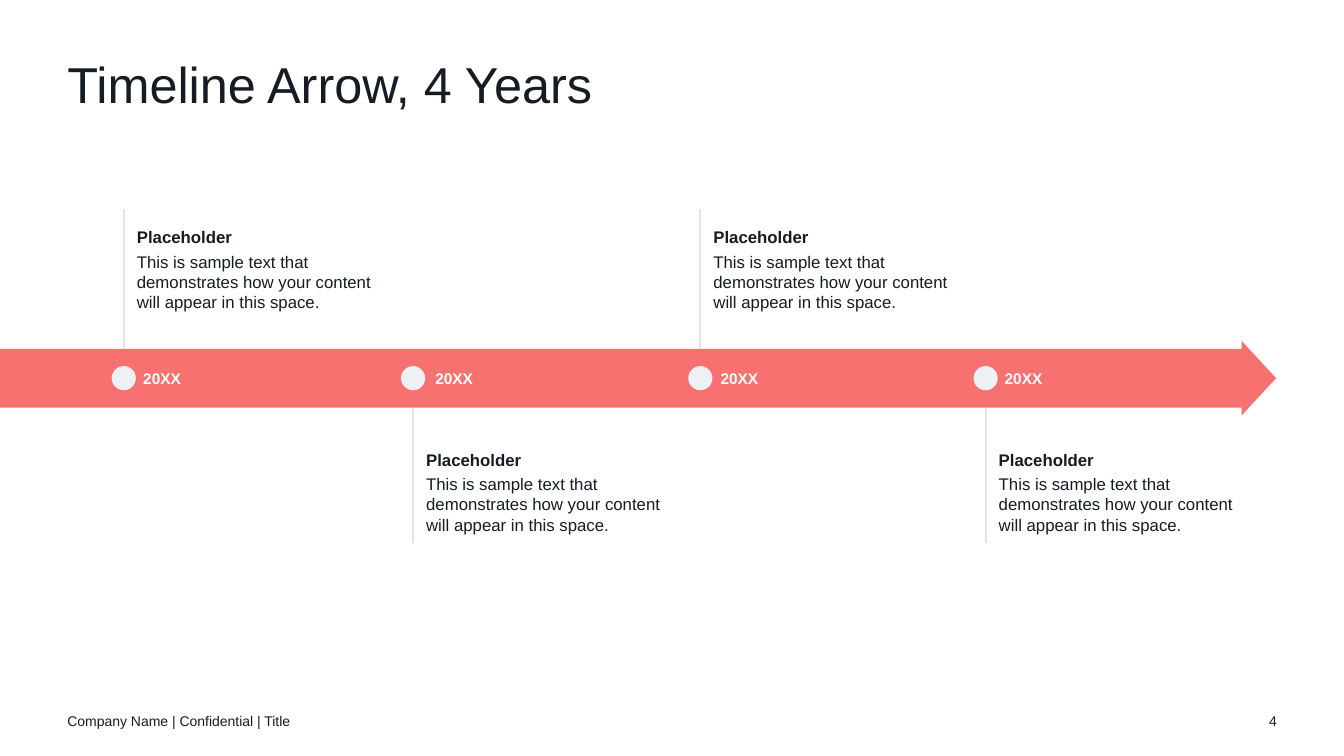
from dataclasses import dataclass

from pptx import Presentation
from pptx.dml.color import RGBColor
from pptx.enum.shapes import MSO_CONNECTOR as Connector, MSO_SHAPE as Preset
from pptx.enum.text import MSO_ANCHOR as Anchor, MSO_AUTO_SIZE as AutoSize, PP_ALIGN as Align
from pptx.oxml.ns import qn
from pptx.slide import Slide
from pptx.text.text import TextFrame
from pptx.util import Cm, Pt

COLORS = {
    "ink": "151C23",
    "arrow": "F87171",
    "dot": "EEF0F4",
    "stem": "E1E4E9",
    "year": "FFFFFF",
}
FONT = "Arial"
SAMPLE = "This is sample text that demonstrates how your content will appear in this space."
AXIS_Y = 9.53
DOT_SIZE = 0.61


@dataclass
class Milestone:
    """One year on the arrow; horizontal positions in cm."""
    x: float
    year_x: float
    above: bool
    year: str = "20XX"
    heading: str = "Placeholder"
    detail: str = SAMPLE


@dataclass
class Side:
    """Vertical positions in cm for notes above or below the arrow."""
    stem_top: float
    stem_bottom: float
    note_top: float


ABOVE = Side(5.26, 9.17, 5.72)
BELOW = Side(9.96, 13.69, 11.33)
MILESTONES = [
    Milestone(3.12, 3.61, True),
    Milestone(10.41, 10.97, False),
    Milestone(17.65, 18.16, True),
    Milestone(24.84, 25.32, False),
]


def color(name: str) -> RGBColor:
    return RGBColor.from_string(COLORS[name])


def format_text(frame: TextFrame, size: float, ink: str = "ink") -> None:
    frame.margin_left = frame.margin_right = frame.margin_top = frame.margin_bottom = 0
    frame.word_wrap = True
    for paragraph in frame.paragraphs:
        for run in paragraph.runs:
            run.font.name = FONT
            run.font.size = Pt(size)
            run.font.color.rgb = color(ink)


def add_text(slide: Slide, left: float, top: float, width: float, height: float,
             text: str, size: float, ink: str = "ink") -> TextFrame:
    frame = slide.shapes.add_textbox(Cm(left), Cm(top), Cm(width), Cm(height)).text_frame
    frame.text = text
    format_text(frame, size, ink)
    return frame


def set_title(slide: Slide, text: str) -> None:
    title = slide.shapes.title
    title.left, title.top, title.width, title.height = Cm(1.7), Cm(1.52), Cm(30.48), Cm(1.52)
    frame = title.text_frame
    frame.text = text
    frame.auto_size = AutoSize.NONE
    frame.vertical_anchor = Anchor.TOP
    frame.paragraphs[0].alignment = Align.LEFT
    frame.paragraphs[0].line_spacing = 0.9
    format_text(frame, 36)


def add_footer(slide: Slide) -> None:
    company = add_text(slide, 1.7, 17.65, 11.43, 1.02, "Company Name | Confidential | Title", 10)
    number = add_text(slide, 30.91, 17.65, 1.27, 1.02, "4", 10)
    number.paragraphs[0].alignment = Align.RIGHT
    company.vertical_anchor = number.vertical_anchor = Anchor.MIDDLE


def add_stem(slide: Slide, milestone: Milestone) -> None:
    side = ABOVE if milestone.above else BELOW
    stem = slide.shapes.add_connector(Connector.STRAIGHT, Cm(milestone.x), Cm(side.stem_top),
                                      Cm(milestone.x), Cm(side.stem_bottom))
    stem.line.color.rgb = color("stem")
    stem.line.width = Pt(1.5)
    properties = stem.element.spPr
    properties.append(properties.makeelement(qn("a:effectLst"), {}))


def add_arrow(slide: Slide) -> None:
    tip, neck = 32.16, 31.29
    head, band = 0.94, 0.74
    outline = [(neck, -head), (tip, 0), (neck, head), (neck, band),
               (0, band), (0, -band), (neck, -band)]
    points = [(Cm(x), Cm(AXIS_Y + offset)) for x, offset in outline]
    builder = slide.shapes.build_freeform(*points[0])
    builder.add_line_segments(points[1:], close=True)
    arrow = builder.convert_to_shape()
    arrow.shadow.inherit = False
    arrow.fill.solid()
    arrow.fill.fore_color.rgb = color("arrow")
    arrow.line.fill.background()


def add_milestone(slide: Slide, milestone: Milestone) -> None:
    # Dot and year on the arrow
    dot = slide.shapes.add_shape(Preset.OVAL, Cm(milestone.x - DOT_SIZE / 2),
                                 Cm(AXIS_Y - DOT_SIZE / 2), Cm(DOT_SIZE), Cm(DOT_SIZE))
    dot.shadow.inherit = False
    dot.fill.solid()
    dot.fill.fore_color.rgb = color("dot")
    dot.line.fill.background()
    year = add_text(slide, milestone.year_x, 9.3, 2.54, 0.48, milestone.year, 11, "year")
    year.paragraphs[0].runs[0].font.bold = True

    # Note beside the stem
    side = ABOVE if milestone.above else BELOW
    note = add_text(slide, milestone.x + 0.33, side.note_top, 6.22, 2.16,
                    f"{milestone.heading}\n{milestone.detail}", 12)
    note.paragraphs[0].runs[0].font.bold = True
    for paragraph in note.paragraphs:
        paragraph.space_after = Pt(3)


def main() -> None:
    deck = Presentation()
    deck.slide_width, deck.slide_height = Cm(33.87), Cm(19.05)
    slide = deck.slides.add_slide(deck.slide_layouts.get_by_name("Title Only"))

    # Title and footer
    set_title(slide, "Timeline Arrow, 4 Years")
    add_footer(slide)

    # Timeline, with the stems behind the arrow
    for milestone in MILESTONES:
        add_stem(slide, milestone)
    add_arrow(slide)
    for milestone in MILESTONES:
        add_milestone(slide, milestone)

    deck.save("out.pptx")


if __name__ == "__main__":
    main()
